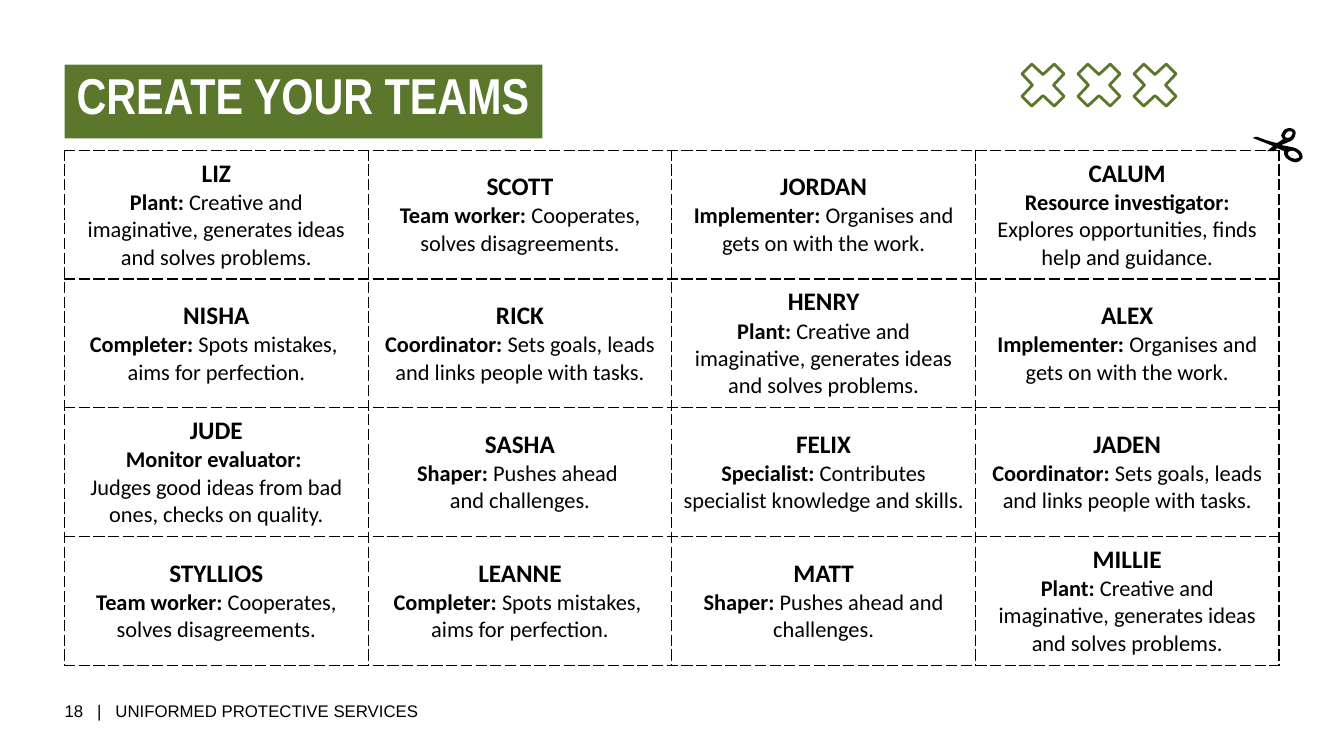
from lxml.etree import SubElement
from pptx import Presentation
from pptx.dml.color import RGBColor
from pptx.enum.text import MSO_ANCHOR, MSO_AUTO_SIZE, PP_ALIGN
from pptx.oxml import parse_xml
from pptx.oxml.ns import nsdecls
from pptx.util import Pt

GREEN, BLACK, WHITE = "5B772B", "000000", "FFFFFF"
LEFT = 46.1


def style(font, name, size, color, bold=False):
    font.name, font.size, font.bold = name, Pt(size), bold
    font.color.rgb = RGBColor.from_string(color)


def curve(start, steps):
    """Return the points of a contour; a step is a line (x, y) or a Bézier of six numbers."""
    points = [start]
    for step in steps:
        x, y = points[-1]
        if len(step) == 2:
            points.append(step)
            continue
        a, b, c, d, e, f = step
        for i in range(1, 9):
            t = i / 8
            u = 1 - t
            w = u**3, 3 * u * u * t, 3 * u * t * t, t**3
            points.append((w[0] * x + w[1] * a + w[2] * c + w[3] * e,
                           w[0] * y + w[1] * b + w[2] * d + w[3] * f))
    return points


deck = Presentation()
deck.slide_width, deck.slide_height = Pt(960), Pt(540)
slide = deck.slides.add_slide(deck.slide_layouts[5])
shapes = slide.shapes

# Title bar
title = shapes.title
title.left, title.top, title.width, title.height = Pt(LEFT), Pt(46.1), Pt(341.3), Pt(43.9)
title.fill.solid()
title.fill.fore_color.rgb = RGBColor.from_string(GREEN)
frame = title.text_frame
frame.text = "CREATE YOUR TEAMS"
frame.margin_left, frame.margin_right = Pt(8.6), Pt(5.8)
frame.margin_top = frame.margin_bottom = 0
frame.word_wrap = False
frame.auto_size = MSO_AUTO_SIZE.SHAPE_TO_FIT_TEXT
frame.vertical_anchor = MSO_ANCHOR.TOP
frame.paragraphs[0].alignment = PP_ALIGN.LEFT
style(frame.paragraphs[0].runs[0].font, "Arial Narrow", 36, WHITE, True)

# Footer
foot = shapes.add_textbox(Pt(LEFT), Pt(500.4), Pt(275), Pt(14.4)).text_frame
foot.text = "18   |   UNIFORMED PROTECTIVE SERVICES"
foot.margin_left = foot.margin_right = foot.margin_top = foot.margin_bottom = 0
foot.word_wrap = True
foot.vertical_anchor = MSO_ANCHOR.MIDDLE
style(foot.paragraphs[0].runs[0].font, "Arial", 12, BLACK)

# Three crosses, drawn in hundredths of a point
cross = [(8, 15), (15, 8), (7.5, 0), (15, -8), (8, -15), (0, -7.5),
         (-8, -15), (-15, -8), (-7.5, 0), (-15, 8), (-8, 15), (0, 7.5)]
pen = None
for mid in (745, 785, 825):
    ring = [((mid + x) * 100, (60.8 + y) * 100) for x, y in cross]
    if pen is None:
        pen = shapes.build_freeform(*ring[0], scale=Pt(0.01))
    else:
        pen.move_to(*ring[0])
    pen.add_line_segments(ring[1:], close=True)
marks = pen.convert_to_shape()
marks.shadow.inherit = False
marks.fill.background()
marks.line.color.rgb = RGBColor.from_string(GREEN)
marks.line.width = Pt(2)

# Team cards: name, role, duty (a line break in the duty starts a new paragraph)
cards = [
    [("LIZ", "Plant:", " Creative and imaginative, generates ideas and solves problems."),
     ("SCOTT", "Team worker: ", "Cooperates, solves disagreements."),
     ("JORDAN", "Implementer: ", "Organises and gets on with the work."),
     ("CALUM", "Resource investigator: ", "Explores opportunities, finds help and guidance.")],
    [("NISHA", "Completer: ", "Spots mistakes, \naims for perfection."),
     ("RICK", "Coordinator:", " Sets goals, leads and links people with tasks."),
     ("HENRY", "Plant: ", "Creative and imaginative, generates ideas and solves problems."),
     ("ALEX", "Implementer: ", "Organises and gets on with the work.")],
    [("JUDE", "Monitor evaluator: ", "\nJudges good ideas from bad ones, checks on quality."),
     ("SASHA", "Shaper: ", "Pushes ahead \nand challenges."),
     ("FELIX", "Specialist: ", "Contributes specialist knowledge and skills."),
     ("JADEN", "Coordinator: ", "Sets goals, leads and links people with tasks.")],
    [("STYLLIOS", "Team worker: ", "Cooperates, solves disagreements."),
     ("LEANNE", "Completer: ", "Spots mistakes, \naims for perfection."),
     ("MATT", "Shaper: ", "Pushes ahead and challenges."),
     ("MILLIE", "Plant: ", "Creative and imaginative, generates ideas and solves problems.")],
]
table = shapes.add_table(4, 4, Pt(LEFT), Pt(107.3), Pt(867.6), Pt(368)).table
table.first_row = table.horz_banding = False
for col in table.columns:
    col.width = Pt(216.9)
for row, line in zip(table.rows, cards):
    row.height = Pt(92)
    for cell, (name, role, duty) in zip(row.cells, line):
        cell.fill.solid()
        cell.fill.fore_color.rgb = RGBColor.from_string(WHITE)
        cell.vertical_anchor = MSO_ANCHOR.MIDDLE
        frame = cell.text_frame
        frame.text = name
        style(frame.paragraphs[0].runs[0].font, "Calibri", 18, BLACK, True)
        para = frame.add_paragraph()
        para.text = role
        style(para.runs[0].font, "Calibri", 16, BLACK, True)
        for i, part in enumerate(duty.split("\n")):
            if i:
                para = frame.add_paragraph()
            if part:
                run = para.add_run()
                run.text = part
                style(run.font, "Calibri", 16, BLACK)
        for para in frame.paragraphs:
            para.alignment = PP_ALIGN.CENTER
        props = cell._tc.get_or_add_tcPr()
        for i, side in enumerate("LRTB"):
            edge = parse_xml(f'<a:ln{side} {nsdecls("a")} w="{Pt(1)}"><a:solidFill>'
                             f'<a:srgbClr val="{BLACK}"/></a:solidFill></a:ln{side}>')
            SubElement(edge, edge[0].tag.replace("solidFill", "prstDash")).set("val", "dash")
            props.insert(i, edge)

# Scissors, in hundredths of an inch from the top left corner: two finger holes, then the outline
cuts = [
    curve((39, 30), [(42, 31, 45, 30, 46, 29), (46, 27, 44, 24, 41, 23), (39, 22, 36, 23, 35, 24),
                     (35, 24, 35, 24, 35, 25), (34, 26, 36, 29, 39, 30)]),
    curve((37, 9), [(38, 8, 39, 7, 39, 6), (39, 5, 39, 5, 39, 4), (38, 3, 35, 3, 34, 4),
                    (33, 5, 32, 6, 32, 7), (32, 8, 32, 8, 32, 9), (33, 10, 36, 10, 37, 9)]),
    curve((14, 23), [(20, 18), (0, 10), (0, 10, 2, 8, 5, 9), (7, 10, 18, 14, 24, 15), (30, 11),
                     (29, 10, 28, 8, 28, 7), (29, 5, 30, 3, 31, 2), (35, -1, 39, 0, 41, 2),
                     (42, 3, 43, 5, 42, 6), (42, 8, 41, 10, 39, 12), (38, 13, 28, 17, 28, 17),
                     (28, 17, 40, 19, 42, 20), (47, 22, 50, 26, 49, 30), (49, 30, 49, 31, 48, 31),
                     (46, 34, 42, 35, 38, 33), (33, 31, 30, 27, 31, 23), (24, 20),
                     (23, 21, 22, 22, 21, 23)]),
]
pen = None
for cut in cuts:
    ring = [(x * 72, y * 72) for x, y in cut]
    if pen is None:
        pen = shapes.build_freeform(*ring[0], scale=Pt(0.01))
    else:
        pen.move_to(*ring[0])
    pen.add_line_segments(ring[1:], close=True)
blades = pen.convert_to_shape(Pt(895), Pt(91.4))
blades.shadow.inherit = False
blades.fill.solid()
blades.fill.fore_color.rgb = RGBColor.from_string(BLACK)
blades.line.fill.background()

deck.save("out.pptx")
